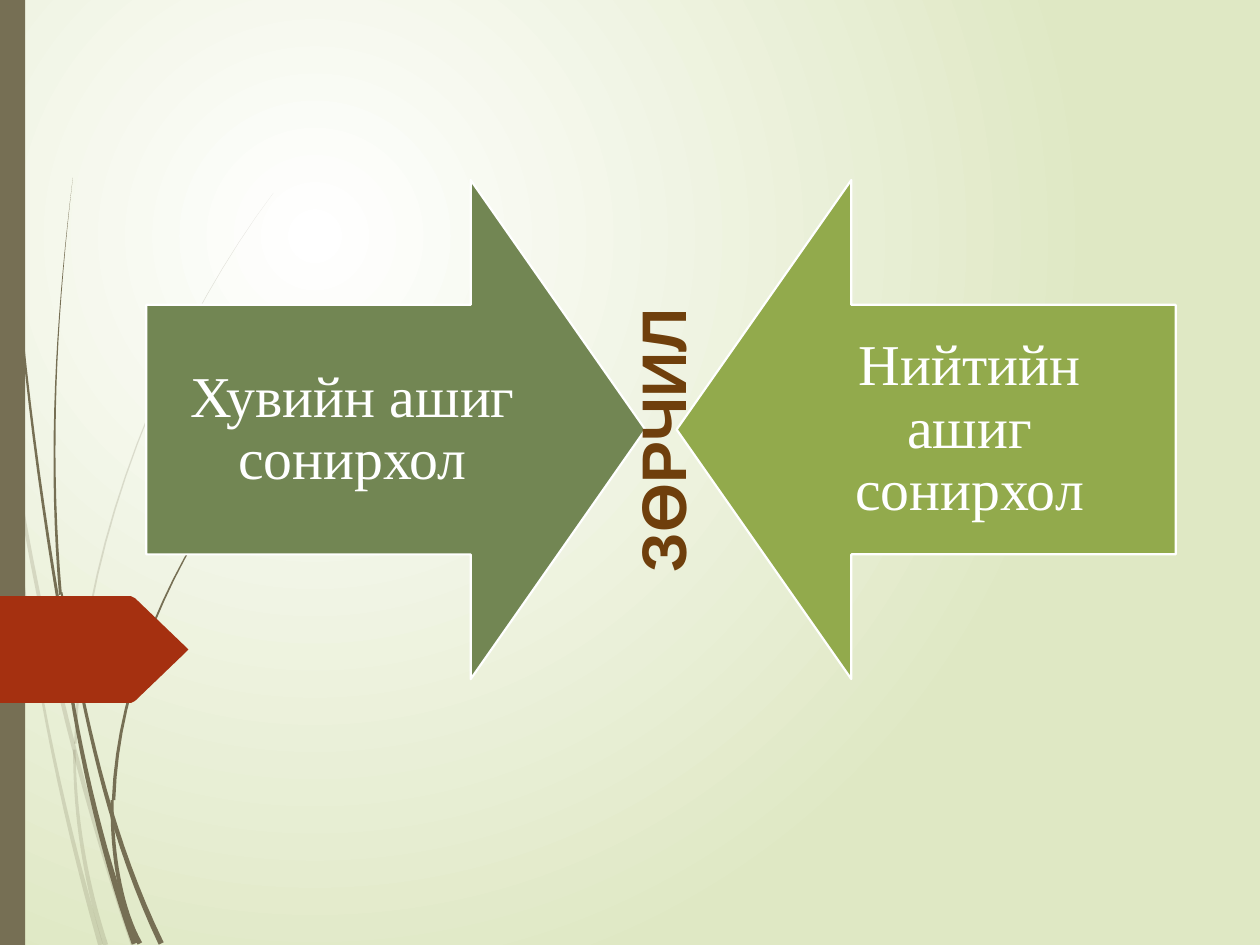
from dataclasses import dataclass
from math import hypot, prod

from lxml import etree
from pptx import Presentation
from pptx.dml.color import RGBColor
from pptx.enum.shapes import MSO_SHAPE
from pptx.enum.text import MSO_ANCHOR, PP_ALIGN
from pptx.oxml.ns import qn
from pptx.util import Cm, Pt

RECTANGLE = MSO_SHAPE.RECTANGLE
DOWN_ARROW = MSO_SHAPE.DOWN_ARROW
CENTER = PP_ALIGN.CENTER
MIDDLE = MSO_ANCHOR.MIDDLE

COLORS = {
    "glow": "FFFFFF",
    "backdrop": "DFE8C4",
    "stem": "766F54",
    "tab": "A53010",
    "private": "728653",
    "public": "92AA4C",
    "conflict": "6F3F0C",
    "white": "FFFFFF",
}

STEM_STEPS = 18
WAYPOINT_TIMES = (0, 1 / 3, 2 / 3, 1)


@dataclass
class Stem:
    waypoints: tuple
    tip_width: float
    base_width: float


PALE_STEMS = [
    Stem(((0, 7.37), (0.64, 11.3), (1.52, 15.19), (2.69, 19.05)), 0.06, 0.1),
    Stem(((0.2, 8.89), (0.56, 12.32), (1.19, 15.75), (2.03, 19.05)), 0, 0.1),
    Stem(((5.51, 3.89), (3.56, 7.11), (2.13, 10.92), (1.52, 14.99)), 0, 0.05),
    Stem(((1.5, 15.11), (1.57, 16.41), (1.78, 17.73), (2.13, 19.05)), 0.05, 0.1),
]

DARK_STEMS = [
    Stem(((0.06, 0), (0.22, 4.06), (0.6, 8.13), (1.19, 12.22)), 0.02, 0.06),
    Stem(((1.24, 11.94), (1.73, 14.35), (2.34, 16.69), (3.25, 19.02)), 0.04, 0.11),
    Stem(((1.19, 12.12), (1.5, 14.35), (2.01, 16.71), (2.72, 19.02)), 0.04, 0.13),
    Stem(((1.47, 3.58), (1.2, 6.38), (1.1, 9.17), (1.22, 11.99)), 0, 0.06),
    Stem(((5.49, 8.74), (3.94, 10.87), (2.79, 13.41), (2.29, 16.13)), 0, 0.07),
    Stem(((2.26, 16.13), (2.31, 17.15), (2.49, 18.16), (2.82, 19.02)), 0.06, 0.1),
]


def color(name):
    return RGBColor.from_string(COLORS[name])


def paint(shape, fill):
    shape.shadow.inherit = False
    shape.fill.solid()
    shape.fill.fore_color.rgb = color(fill)
    shape.line.fill.background()


def add_outline(shapes, left, top, points, fill):
    corners = [(Cm(x), Cm(y)) for x, y in points]
    builder = shapes.build_freeform(*corners[0], scale=1.0)
    builder.add_line_segments(corners[1:], close=True)
    shape = builder.convert_to_shape(left, top)
    paint(shape, fill)
    return shape


def point_on_curve(waypoints, time):
    weights = [prod((time - other) / (own - other)
                    for other in WAYPOINT_TIMES if other != own)
               for own in WAYPOINT_TIMES]
    return tuple(sum(weight * value for weight, value in zip(weights, axis))
                 for axis in zip(*waypoints))


def stem_outline(stem):
    centers = [point_on_curve(stem.waypoints, step / STEM_STEPS)
               for step in range(STEM_STEPS + 1)]
    right_edge, left_edge = [], []
    for step, (x, y) in enumerate(centers):
        before = centers[max(step - 1, 0)]
        after = centers[min(step + 1, STEM_STEPS)]
        run, rise = after[0] - before[0], after[1] - before[1]
        width = stem.tip_width + (stem.base_width - stem.tip_width) * step / STEM_STEPS
        reach = width / 2 / hypot(run, rise)
        right_edge.append((x + rise * reach, y - run * reach))
        left_edge.append((x - rise * reach, y + run * reach))
    return right_edge + left_edge[::-1]


def tab_outline(width, height, bevel):
    upper = [(0, 0), (width - height / 2 - bevel, 0), (width - height / 2, bevel / 2),
             (width - bevel / 2, height / 2 - bevel / 2)]
    lower = [(x, height - y) for x, y in reversed(upper)]
    return upper + [(width, height / 2)] + lower


def set_background(slide):
    fill = slide.background.fill
    fill.gradient()
    for stop, name in zip(fill.gradient_stops, ("glow", "backdrop")):
        stop.color.rgb = color(name)
    gradient = slide.element.find(".//" + qn("a:gradFill"))
    gradient.remove(gradient.find(qn("a:lin")))
    radial = etree.SubElement(gradient, qn("a:path"), {"path": "circle"})
    etree.SubElement(radial, qn("a:fillToRect"),
                     {"l": "50000", "t": "50000", "r": "100000", "b": "100000"})


def add_stems(slide, left, top, stems, opacity):
    group = slide.shapes.add_group_shape()
    for stem in stems:
        shape = add_outline(group.shapes, left, top, stem_outline(stem), "stem")
        if opacity < 100:
            tint = shape.element.find(".//" + qn("a:srgbClr"))
            etree.SubElement(tint, qn("a:alpha"), {"val": str(opacity * 1000)})


def add_side_decoration(slide, left, top, height):
    add_stems(slide, left, top, PALE_STEMS, opacity=20)
    add_stems(slide, left, top, DARK_STEMS, opacity=100)
    bar = slide.shapes.add_shape(RECTANGLE, left, top, Cm(0.51), height)
    paint(bar, "stem")
    add_outline(slide.shapes, left - Cm(0.08), top + Cm(12.02),
                tab_outline(width=3.88, height=2.15, bevel=0.08), "tab")


def add_label(shapes, box, text, font, size, fill, inset):
    label = shapes.add_textbox(*box)
    frame = label.text_frame
    frame.word_wrap = True
    frame.vertical_anchor = MIDDLE
    frame.margin_left = frame.margin_right = inset
    frame.margin_top = frame.margin_bottom = inset
    paragraph = frame.paragraphs[0]
    paragraph.alignment = CENTER
    run = paragraph.add_run()
    run.text = text
    run.font.name = font
    run.font.size = Pt(size)
    run.font.color.rgb = color(fill)
    return label


def add_interest_arrow(shapes, left, top, size, rotation, fill, text, text_offset, text_width):
    arrow = shapes.add_shape(DOWN_ARROW, left, top, size, size)
    paint(arrow, fill)
    arrow.rotation = rotation
    arrow.adjustments[0] = 0.5
    arrow.adjustments[1] = 0.35
    arrow.line.color.rgb = color("white")
    arrow.line.width = Pt(1.25)
    box = (left + text_offset, top + size // 4, text_width, size // 2)
    label = add_label(shapes, box, text, "Times New Roman", 33, "white", Cm(0.66))
    label.text_frame.paragraphs[0].line_spacing = 0.9


def add_conflict_diagram(slide, left, top, width, size):
    shapes = slide.shapes.add_group_shape().shapes
    text_width = Cm(8.31)
    add_interest_arrow(shapes, left, top, size, 270, "private",
                       "Хувийн ашиг сонирхол", 0, text_width)
    add_interest_arrow(shapes, left + width - size, top, size, 90, "public",
                       "Нийтийн ашиг сонирхол", size - text_width, text_width)
    box = (left + Cm(5.08), top + Cm(4.34), Cm(10.59), Cm(1.8))
    label = add_label(slide.shapes, box, "ЗӨРЧИЛ", "Arial", 36, "conflict", Cm(0.13))
    label.text_frame.paragraphs[0].runs[0].font.bold = True
    label.rotation = 270


def main():
    presentation = Presentation()
    presentation.slide_width = Cm(25.4)
    presentation.slide_height = Cm(19.05)
    slide = presentation.slides.add_slide(presentation.slide_layouts[6])
    set_background(slide)
    add_side_decoration(slide, Cm(0), Cm(0), presentation.slide_height)
    add_conflict_diagram(slide, Cm(2.95), Cm(3.63), Cm(20.75), Cm(10.06))
    presentation.save("out.pptx")


if __name__ == "__main__":
    main()
